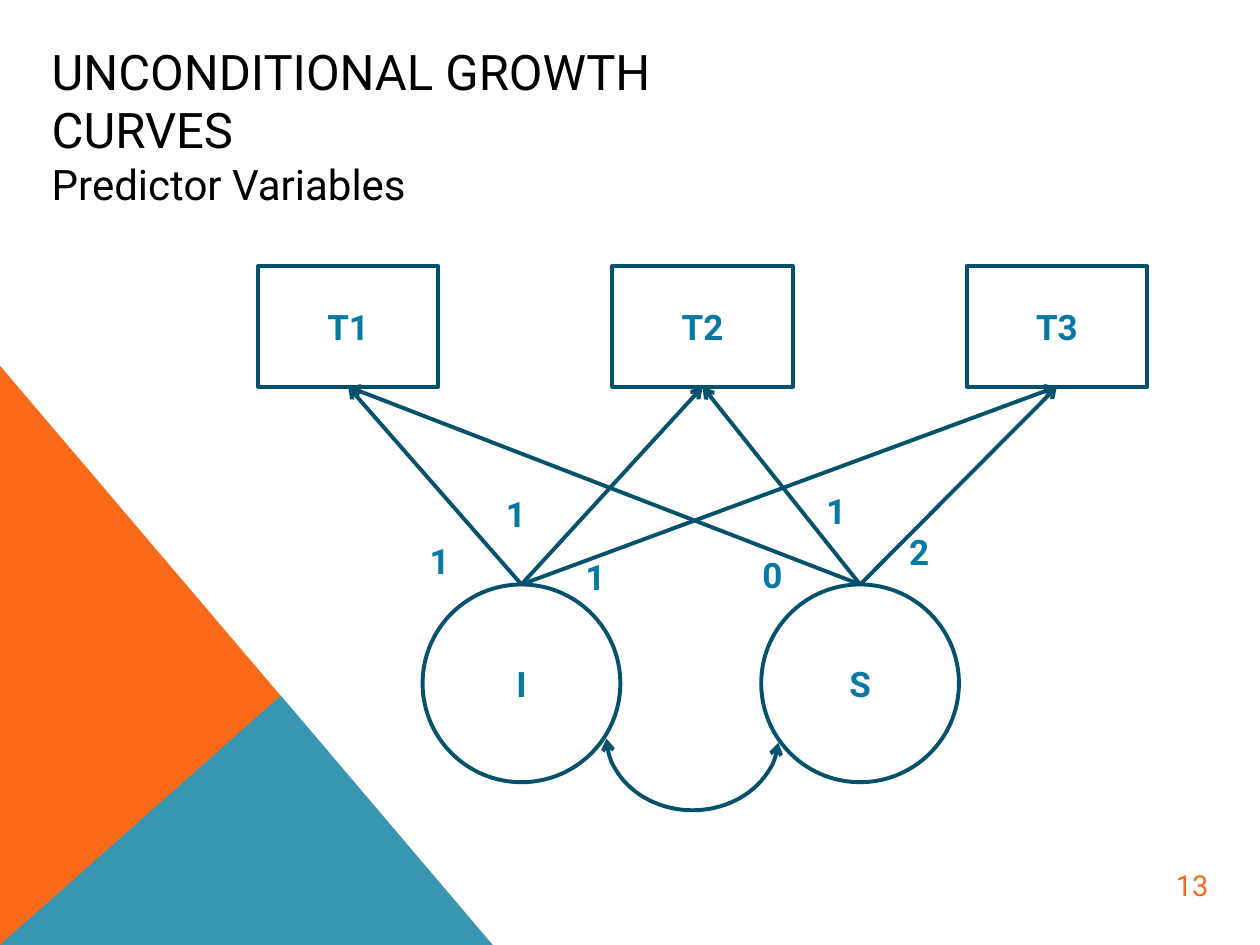
"""Builds a slide with a path diagram of an unconditional growth curve model."""
from dataclasses import dataclass

from lxml import etree
from pptx import Presentation
from pptx.dml.color import RGBColor
from pptx.enum.shapes import MSO_CONNECTOR, MSO_SHAPE
from pptx.enum.text import MSO_ANCHOR, PP_ALIGN
from pptx.oxml.ns import qn
from pptx.util import Pt

ARC, ELLIPSE = MSO_SHAPE.ARC, MSO_SHAPE.OVAL
RECTANGLE, TRIANGLE = MSO_SHAPE.RECTANGLE, MSO_SHAPE.RIGHT_TRIANGLE
STRAIGHT = MSO_CONNECTOR.STRAIGHT
MIDDLE, CENTER = MSO_ANCHOR.MIDDLE, PP_ALIGN.CENTER
TOP_SITE, BOTTOM_SITE = 0, 2


@dataclass(frozen=True)
class Theme:
    font: str = "Roboto"
    orange: str = "F96A1B"
    teal: str = "08A1D9"
    line: str = "04516C"
    label: str = "0679A3"
    black: str = "000000"
    white: str = "FFFFFF"
    title_size: float = 28
    subtitle_size: float = 24
    label_size: float = 20
    number_size: float = 16.5
    line_width: float = 2.25


class Page:
    def __init__(self, slide, theme):
        self.shapes = slide.shapes
        self.theme = theme

    def style_font(self, font, size, color, bold=False):
        font.name, font.size, font.bold = self.theme.font, Pt(size), bold
        font.color.rgb = RGBColor.from_string(color)

    def paint(self, shape, fill=None, line=None):
        shape.shadow.inherit = False
        if fill:
            shape.fill.solid()
            shape.fill.fore_color.rgb = RGBColor.from_string(fill)
        else:
            shape.fill.background()
        if line:
            shape.line.color.rgb = RGBColor.from_string(line)
            shape.line.width = Pt(self.theme.line_width)
        else:
            shape.line.fill.background()

    def shape(self, kind, left, top, width, height, fill=None, line=None):
        shape = self.shapes.add_shape(kind, Pt(left), Pt(top), Pt(width), Pt(height))
        self.paint(shape, fill, line)
        return shape

    def polygon(self, points, fill, opacity):
        corners = [(Pt(x), Pt(y)) for x, y in points]
        builder = self.shapes.build_freeform(*corners[0], scale=1.0)
        builder.add_line_segments(corners[1:], close=True)
        shape = builder.convert_to_shape()
        self.paint(shape, fill)
        color = shape.fill._xPr.find(qn("a:solidFill"))[0]
        etree.SubElement(color, qn("a:alpha"), val=str(opacity * 1000))

    def caption(self, shape, text, size, color, bold=False):
        frame = shape.text_frame
        frame.vertical_anchor = MIDDLE
        para = frame.paragraphs[0]
        para.text, para.alignment = text, CENTER
        self.style_font(para.font, size, color, bold)

    def variable(self, kind, text, left, top, width, height):
        shape = self.shape(kind, left, top, width, height, line=self.theme.line)
        self.caption(shape, text, self.theme.label_size, self.theme.label, True)
        return shape

    def arrowheads(self, shape, *ends):
        outline = shape.line._get_or_add_ln()
        for end in ends:
            etree.SubElement(outline, qn(f"a:{end}"), type="arrow")

    def path_arrow(self, factor, measure):
        arrow = self.shapes.add_connector(STRAIGHT, 0, 0, 0, 0)
        arrow.begin_connect(factor, TOP_SITE)
        arrow.end_connect(measure, BOTTOM_SITE)
        arrow.line.color.rgb = RGBColor.from_string(self.theme.line)
        arrow.line.width = Pt(self.theme.line_width)
        self.arrowheads(arrow, "tailEnd")
        etree.SubElement(arrow._element.spPr, qn("a:effectLst"))

    def covariance(self, left, top, width, height):
        arc = self.shape(ARC, left, top, width, height, line=self.theme.line)
        arc.adjustments[0], arc.adjustments[1] = 2.73, 106.94
        self.arrowheads(arc, "headEnd", "tailEnd")

    def text_box(self, left, top, width, height):
        box = self.shapes.add_textbox(Pt(left), Pt(top), Pt(width), Pt(height))
        box.text_frame.word_wrap = True
        return box.text_frame

    def title(self, heading, subheading):
        frame = self.text_box(22.5, 27.5, 446.5, 88)
        frame.vertical_anchor = MIDDLE
        para = frame.paragraphs[0]
        span = para.add_run()
        span.text = heading
        self.style_font(span.font, self.theme.title_size, self.theme.black)
        para.add_line_break()
        span = para.add_run()
        span.text = subheading
        self.style_font(span.font, self.theme.subtitle_size, self.theme.black)

    def loading(self, text, left, top):
        para = self.text_box(left, top, 36.5, 38).paragraphs[0]
        para.text = text
        self.style_font(para.font, self.theme.label_size, self.theme.label, True)

    def page_number(self, text):
        badge = self.shape(ELLIPSE, 661.5, 486, 39.5, 39.5, self.theme.white)
        frame = badge.text_frame
        frame.margin_left = frame.margin_right = Pt(0.72)
        frame.margin_top = frame.margin_bottom = Pt(0.72)
        self.caption(badge, text, self.theme.number_size, self.theme.orange)


def main():
    deck = Presentation()
    deck.slide_width, deck.slide_height = Pt(720), Pt(540)
    theme = Theme()
    page = Page(deck.slides.add_slide(deck.slide_layouts[6]), theme)

    page.shape(TRIANGLE, 0, 209, 281.5, 331, theme.orange)
    page.polygon([(0, 540), (160.5, 397.5), (281.5, 540)], theme.teal, 80)
    page.title("UNCONDITIONAL GROWTH CURVES", "Predictor Variables")

    factors = [
        page.variable(ELLIPSE, name, 241.5 + 193.5 * column, 334, 113, 113)
        for column, name in enumerate(["I", "S"])
    ]
    measures = [
        page.variable(RECTANGLE, name, 147.5 + 202.5 * column, 152, 103, 69)
        for column, name in enumerate(["T1", "T2", "T3"])
    ]
    for factor in factors:
        for measure in measures:
            page.path_arrow(factor, measure)
    page.covariance(346.5, 378, 98.5, 85)

    loadings = [
        ("1", 238.5, 304.5), ("1", 282, 278), ("1", 327.5, 314),
        ("0", 428.5, 313), ("1", 465, 276), ("2", 512.5, 299.5),
    ]
    for text, left, top in loadings:
        page.loading(text, left, top)
    page.page_number("13")
    deck.save("out.pptx")


if __name__ == "__main__":
    main()
